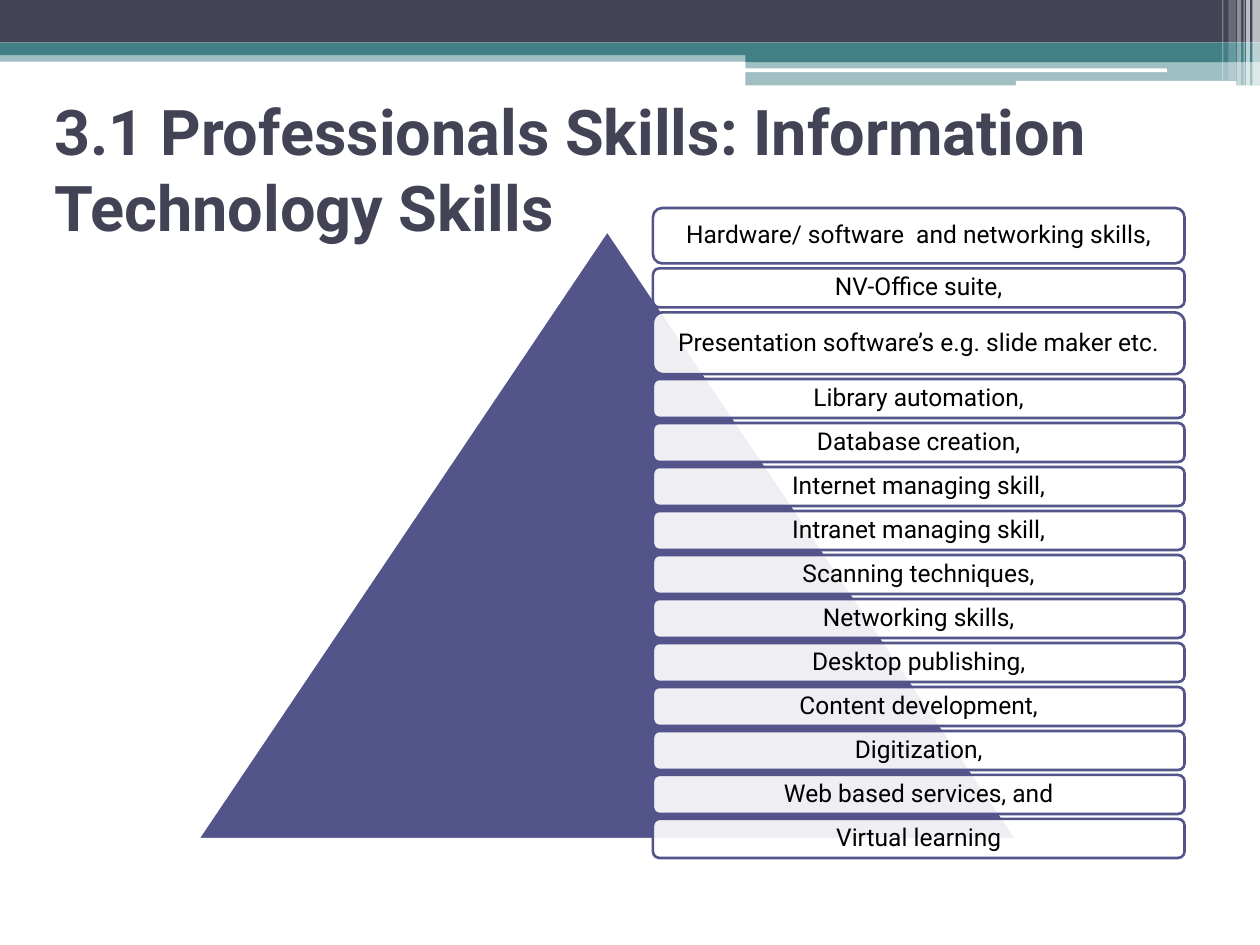
from lxml import etree
from pptx import Presentation
from pptx.dml.color import RGBColor
from pptx.enum.shapes import MSO_SHAPE
from pptx.enum.text import MSO_ANCHOR, MSO_AUTO_SIZE, PP_ALIGN
from pptx.oxml.ns import qn
from pptx.util import Pt

RECT, ROUNDED, TRIANGLE = (MSO_SHAPE.RECTANGLE, MSO_SHAPE.ROUNDED_RECTANGLE,
                           MSO_SHAPE.ISOSCELES_TRIANGLE)
MIDDLE, NO_FIT = MSO_ANCHOR.MIDDLE, MSO_AUTO_SIZE.NONE
LEFT, CENTER = PP_ALIGN.LEFT, PP_ALIGN.CENTER

THEME = {
    "font": "Roboto", "title_size": 36, "skill_size": 14, "outline": 1.5,
    "navy": "424456", "teal": "438086", "violet": "53548A",
    "white": "FFFFFF", "black": "000000",
}

TITLE = "3.1 Professionals Skills: Information Technology Skills"
TITLE_BOX = (23.76, 54, 648, 84.24)

ROW = 22.35
SKILLS = [  # text, box height
    ("Hardware/ software  and networking skills,", 31.7),
    ("NV-Office suite,", ROW),
    ("Presentation software’s e.g. slide maker etc.", 35.3),
    ("Library automation,", ROW),
    ("Database creation,", ROW),
    ("Internet managing skill,", ROW),
    ("Intranet managing skill,", ROW),
    ("Scanning techniques,", ROW),
    ("Networking skills,", ROW),
    ("Desktop publishing,", ROW),
    ("Content development,", ROW),
    ("Digitization,", ROW),
    ("Web based services, and", ROW),
    ("Virtual learning", ROW),
]
SKILL_LEFT, SKILL_TOP, SKILL_WIDTH, SKILL_GAP = 373.1, 118.86, 303.8, 2.79
PYRAMID_BOX = (113.04, 131.76, 468, 347.76)

HEADER_BANDS = [  # shape, box, colour, opacity in percent
    (RECT, (0, 28.8, 720, 6.5), "teal", 50),
    (RECT, (0, 0, 720, 24.3), "navy", 100),
    (RECT, (0, 24.3, 720, 7.2), "teal", 100),
    (RECT, (426, 28.3, 294, 7.2), "teal", 100),
    (RECT, (426, 34.8, 294, 14), "teal", 50),
    (ROUNDED, (425.5, 39.1, 241.3, 2.2), "white", 100),
    (ROUNDED, (580.5, 46.2, 126, 2.8), "white", 100),
]
HEADER_STRIPES = [  # left, width, height, opacity in percent
    (715.7, 4.3, 49, 65),
    (712.1, 2.2, 49, 65),
    (710.6, 0.7, 49, 60),
    (707, 2.2, 49, 40),
    (702, 4.3, 46, 20),
    (698.4, 0.7, 46, 30),
]


def color(name):
    return RGBColor.from_string(THEME[name])


def apply(target, values):
    for name, value in values.items():
        setattr(target, name, value)


def add_block(slide, kind, box, fill, opacity=100, outline=None):
    block = slide.shapes.add_shape(kind, *map(Pt, box))
    block.shadow.inherit = False
    block.fill.solid()
    block.fill.fore_color.rgb = color(fill)
    if opacity < 100:
        tint = block.fill._xPr.find(qn("a:solidFill"))[0]
        etree.SubElement(tint, qn("a:alpha"), val=str(opacity * 1000))
    if outline:
        block.line.color.rgb = color(outline)
        block.line.width = Pt(THEME["outline"])
    else:
        block.line.fill.background()
    return block


def write(shape, text, size, ink, align, bold=False, spacing=1.0):
    frame = shape.text_frame
    apply(frame, {"text": text, "word_wrap": True, "auto_size": NO_FIT,
                  "vertical_anchor": MIDDLE})
    paragraph = frame.paragraphs[0]
    apply(paragraph, {"alignment": align, "line_spacing": spacing})
    font = paragraph.runs[0].font
    apply(font, {"name": THEME["font"], "size": Pt(THEME[size]), "bold": bold})
    font.color.rgb = color(ink)


def add_header(slide):
    for kind, box, fill, opacity in HEADER_BANDS:
        add_block(slide, kind, box, fill, opacity)
    for left, width, height, opacity in HEADER_STRIPES:
        add_block(slide, RECT, (left, 0, width, height), "white", opacity)


def add_title(slide):
    title = slide.shapes.title
    apply(title, dict(zip(("left", "top", "width", "height"),
                          map(Pt, TITLE_BOX))))
    write(title, TITLE, "title_size", "navy", LEFT, bold=True)


def add_skill_pyramid(slide):
    add_block(slide, TRIANGLE, PYRAMID_BOX, "violet", outline="white")
    top = SKILL_TOP
    margins = ("margin_left", "margin_top", "margin_right", "margin_bottom")
    for skill, height in SKILLS:
        label = add_block(slide, ROUNDED, (SKILL_LEFT, top, SKILL_WIDTH, height),
                          "white", 90, "violet")
        apply(label.text_frame, dict.fromkeys(margins, Pt(4.2)))
        write(label, skill, "skill_size", "black", CENTER, spacing=0.9)
        top += height + SKILL_GAP


def main():
    deck = Presentation()
    apply(deck, {"slide_width": Pt(720), "slide_height": Pt(540)})
    slide = deck.slides.add_slide(deck.slide_layouts[5])
    add_header(slide)
    add_title(slide)
    add_skill_pyramid(slide)
    deck.save("out.pptx")


if __name__ == "__main__":
    main()
